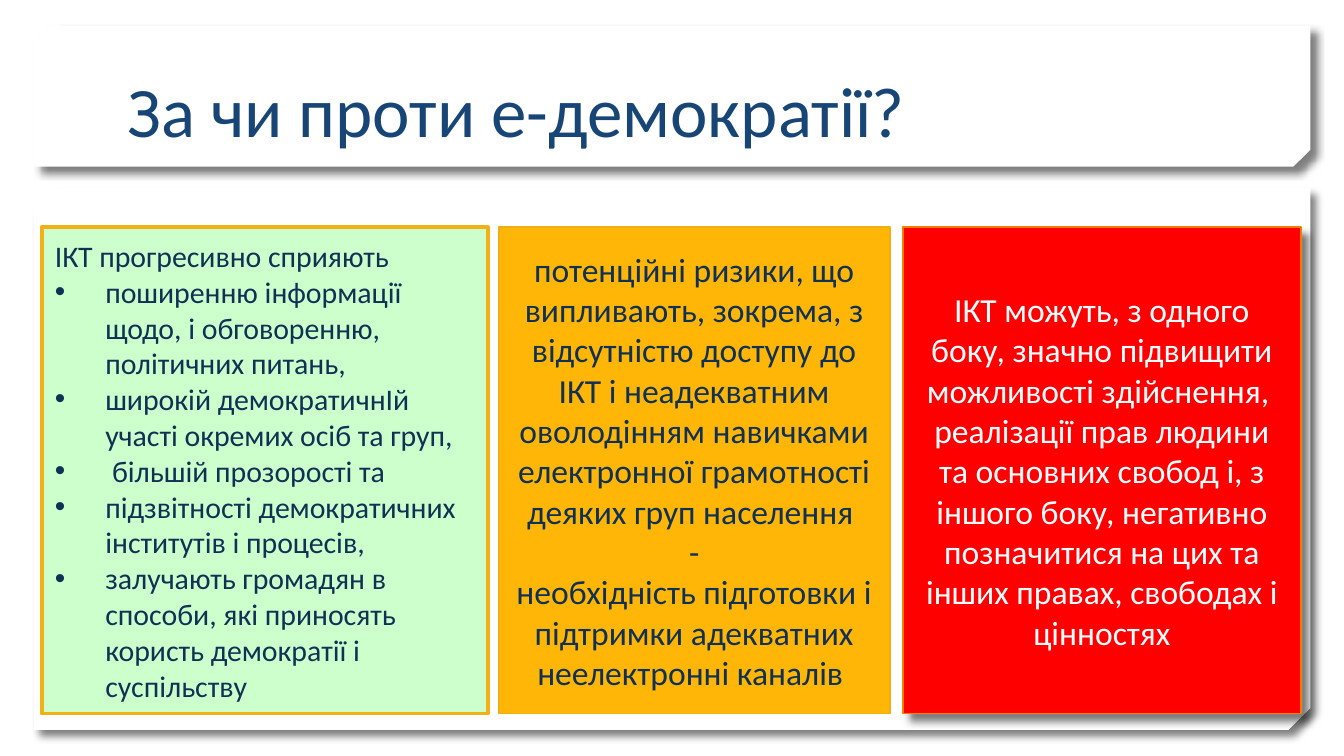
"""Build a slide that weighs the pros and cons of e-democracy."""
from lxml.etree import SubElement
from pptx import Presentation
from pptx.dml.color import RGBColor as RGB
from pptx.enum.shapes import MSO_SHAPE as SHAPE
from pptx.enum.text import MSO_ANCHOR as ANCHOR, PP_ALIGN as ALIGN
from pptx.oxml.ns import qn
from pptx.util import Pt


class Theme:
    font = "Calibri"
    title, list, body = 38, 16, 18
    blue, navy, white = "174576", "103154", "FFFFFF"
    green, amber, red = "CCFFCC", "FFB607", "FF0000"
    gold, ochre, orange = "F1B015", "F1AE0F", "FA7C00"
    shade = "000000"


def cast(shape):
    effect = shape._element.spPr.find(qn("a:effectLst"))
    outer = SubElement(effect, qn("a:outerShdw"), blurRad=str(Pt(4)), dist=str(Pt(5)),
                       dir="2700000", algn="tl", rotWithShape="0")
    color = SubElement(outer, qn("a:srgbClr"), val=Theme.shade)
    SubElement(color, qn("a:alpha"), val="50000")


def write(shape, lines, size, color, align, anchor):
    frame = shape.text_frame
    frame.word_wrap = True
    frame.vertical_anchor = anchor
    frame.text = "\n".join(lines)
    for para in frame.paragraphs:
        para.alignment = align
        for run in para.runs:
            run.font.name = Theme.font
            run.font.size = Pt(size)
            run.font.color.rgb = RGB.from_string(color)


deck = Presentation()
deck.slide_width, deck.slide_height = Pt(720), Pt(405)
slide = deck.slides.add_slide(deck.slide_layouts[6])
shapes = slide.shapes

for top, height, snip in [(100.8, 290.2, 0.04), (13.7, 75.6, 0.12)]:
    panel = shapes.add_shape(SHAPE.SNIP_2_DIAG_RECTANGLE, Pt(18), Pt(top), Pt(684), Pt(height))
    panel.adjustments[0], panel.adjustments[1] = 0, snip
    panel._element.spPr.xfrm.set("flipV", "1")
    panel.fill.solid()
    panel.fill.fore_color.rgb = RGB.from_string(Theme.white)
    panel.line.fill.background()
    panel.shadow.inherit = False
    cast(panel)

title = shapes.add_textbox(Pt(61.2), Pt(17.3), Pt(596.9), Pt(67.7))
write(title, ["За чи проти е-демократії?"], Theme.title, Theme.blue, ALIGN.LEFT, ANCHOR.BOTTOM)

gains = [
    "ІКТ прогресивно сприяють",
    "поширенню інформації щодо, і обговоренню, політичних питань,",
    "широкій демократичнІй участі окремих осіб та груп,",
    " більшій прозорості та",
    "підзвітності демократичних інститутів і процесів,",
    "залучають громадян в способи, які приносять користь демократії і суспільству",
]
risks = [
    "потенційні ризики, що випливають, зокрема, з відсутністю доступу до ІКТ "
    "і неадекватним оволодінням навичками електронної грамотності деяких груп населення ",
    "-",
    "необхідність підготовки і підтримки адекватних неелектронні каналів ",
]
rights = [
    "ІКТ можуть, з одного боку, значно підвищити можливості здійснення,  "
    "реалізації прав людини та основних свобод і, з іншого боку, негативно "
    "позначитися на цих та інших правах, свободах і цінностях",
]
cards = [
    (22.3, 239, Theme.green, Theme.gold, 2, gains, Theme.list, Theme.navy, ALIGN.LEFT),
    (267.1, 209.5, Theme.amber, Theme.ochre, 1, risks, Theme.body, Theme.navy, ALIGN.CENTER),
    (483.8, 213.1, Theme.red, Theme.orange, 1, rights, Theme.body, Theme.white, ALIGN.CENTER),
]
boxes = []
for left, width, fill, edge, weight, lines, size, color, align in cards:
    box = shapes.add_shape(SHAPE.RECTANGLE, Pt(left), Pt(121.7), Pt(width), Pt(260.6))
    box.fill.solid()
    box.fill.fore_color.rgb = RGB.from_string(fill)
    box.line.color.rgb = RGB.from_string(edge)
    box.line.width = Pt(weight)
    box.shadow.inherit = False
    write(box, lines, size, color, align, ANCHOR.MIDDLE)
    boxes.append(box)
cast(boxes[-1])

for para in boxes[0].text_frame.paragraphs[1:]:
    props = para._p.get_or_add_pPr()
    props.set("marL", str(Pt(27)))
    props.set("indent", str(-Pt(27)))
    SubElement(props, qn("a:buFont"), typeface="Arial")
    SubElement(props, qn("a:buChar"), char="•")

deck.save("out.pptx")
